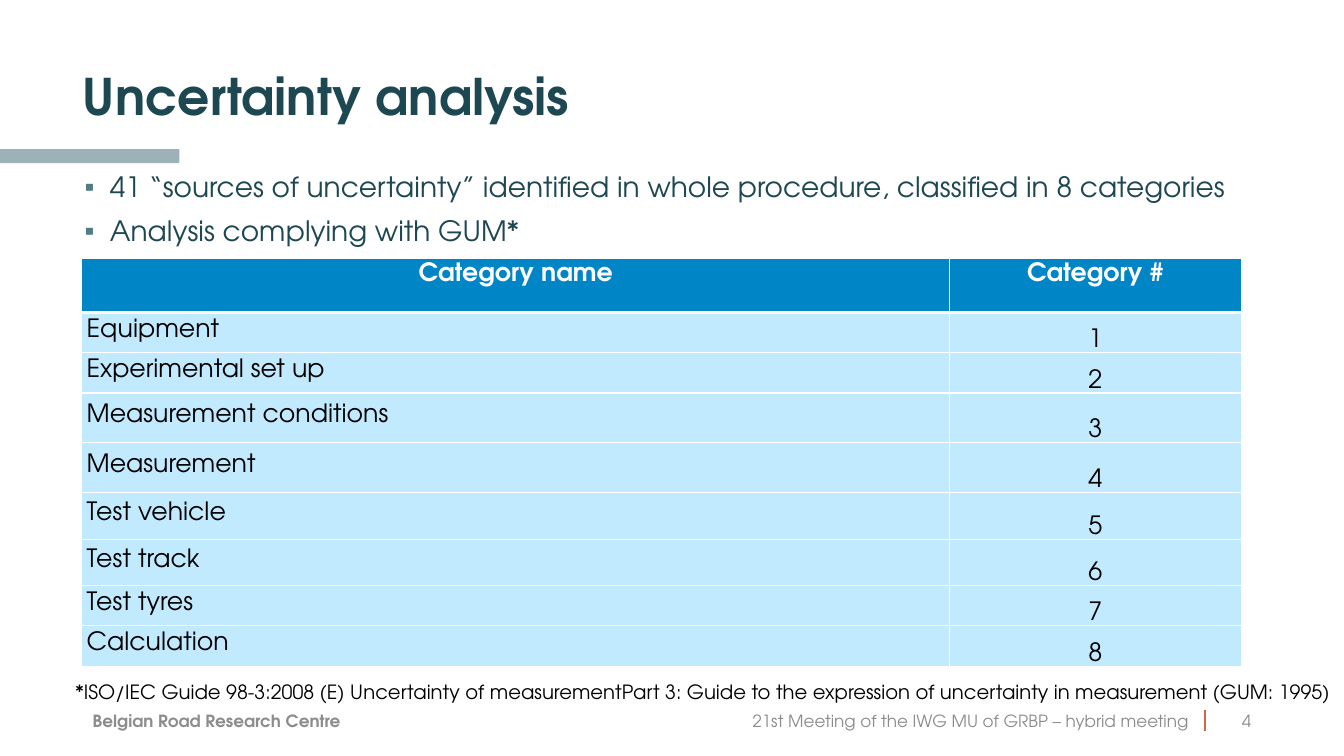
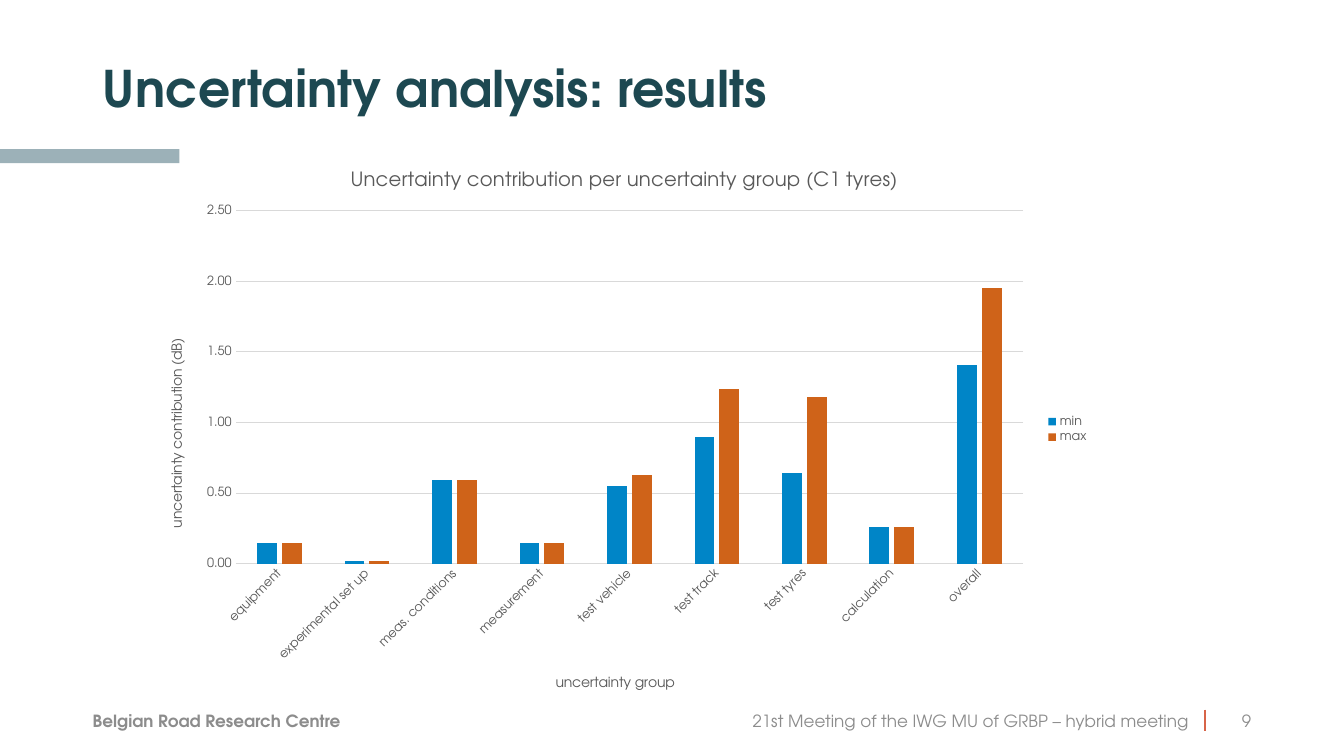
"""Build two slides on uncertainty analysis: a category table and a results chart."""
from dataclasses import dataclass

from lxml import etree
from pptx import Presentation
from pptx.chart.data import CategoryChartData
from pptx.dml.color import RGBColor
from pptx.enum.chart import XL_CHART_TYPE, XL_LEGEND_POSITION, XL_TICK_MARK
from pptx.enum.shapes import MSO_CONNECTOR, MSO_SHAPE
from pptx.enum.text import MSO_ANCHOR, MSO_AUTO_SIZE, PP_ALIGN
from pptx.oxml import parse_xml
from pptx.oxml.ns import nsdecls, qn
from pptx.util import Inches, Pt

LEFT, CENTER, RIGHT = PP_ALIGN.LEFT, PP_ALIGN.CENTER, PP_ALIGN.RIGHT
TOP, MIDDLE, BOTTOM = MSO_ANCHOR.TOP, MSO_ANCHOR.MIDDLE, MSO_ANCHOR.BOTTOM
NO_AUTOFIT = MSO_AUTO_SIZE.NONE
RECTANGLE = MSO_SHAPE.RECTANGLE
STRAIGHT = MSO_CONNECTOR.STRAIGHT
CLUSTERED_COLUMNS = XL_CHART_TYPE.COLUMN_CLUSTERED
LEGEND_RIGHT = XL_LEGEND_POSITION.RIGHT
NO_TICKS = XL_TICK_MARK.NONE


@dataclass(frozen=True)
class Theme:
    font: str = "TeX Gyre Adventor"
    heading: str = "1D4851"
    bullet: str = "527B85"
    band: str = "9CB1B8"
    divider: str = "D76448"
    footer: str = "8C8C8C"
    black: str = "000000"
    white: str = "FFFFFF"
    blue: str = "0085C7"
    pale_blue: str = "C1EAFF"
    orange: str = "CF6319"
    chart_text: str = "595959"
    grid: str = "D9D9D9"
    title_size: int = 36
    list_size: int = 20
    table_size: int = 18
    note_size: int = 14
    footer_size: int = 12
    axis_title_size: int = 10
    label_size: int = 9


THEME = Theme()


def style_font(font, size, color, bold=False):
    font.name = THEME.font
    font.size = Pt(size)
    font.bold = bold
    font.color.rgb = RGBColor.from_string(color)


def add_text(slide, box, text, size, color, bold=False, align=LEFT, anchor=MIDDLE):
    frame = slide.shapes.add_textbox(*map(Inches, box)).text_frame
    frame.word_wrap = True
    frame.vertical_anchor = anchor
    paragraph = frame.paragraphs[0]
    paragraph.text = text
    paragraph.alignment = align
    style_font(paragraph.font, size, color, bold)
    return frame


presentation = Presentation()
presentation.slide_width = Inches(13.33)
presentation.slide_height = Inches(7.5)

pages = [
    (1, "Uncertainty analysis", (0.72, 0.22, 11.88, 1.53), "4"),
    (5, "Uncertainty analysis: results", (0.92, 0.32, 11.5, 1.16), "9"),
]
slides = []
for layout_index, title_text, title_box, number in pages:
    slide = presentation.slides.add_slide(presentation.slide_layouts[layout_index])
    slides.append(slide)

    band = slide.shapes.add_shape(RECTANGLE, 0, Inches(1.48), Inches(1.78), Inches(0.14))
    band.shadow.inherit = False
    band.fill.solid()
    band.fill.fore_color.rgb = RGBColor.from_string(THEME.band)
    band.line.fill.background()

    divider = slide.shapes.add_connector(
        STRAIGHT, Inches(11.95), Inches(7.04), Inches(11.95), Inches(7.25))
    divider.line.color.rgb = RGBColor.from_string(THEME.divider)
    divider.line.width = Pt(1.5)
    etree.SubElement(divider.element.spPr, qn("a:effectLst"))

    title = slide.shapes.title
    title.left, title.top, title.width, title.height = map(Inches, title_box)
    title.text_frame.auto_size = NO_AUTOFIT
    title.text_frame.vertical_anchor = MIDDLE
    paragraph = title.text_frame.paragraphs[0]
    paragraph.text = title_text
    paragraph.alignment = LEFT
    paragraph.line_spacing = 0.9
    style_font(paragraph.font, THEME.title_size, THEME.heading, True)

    organisation = add_text(slide, (0.92, 6.95, 4.06, 0.4), "Belgian Road Research Centre",
                            THEME.footer_size, THEME.footer, bold=True)
    organisation.margin_left = 0
    add_text(slide, (4.97, 6.95, 6.92, 0.4),
             "21st Meeting of the IWG MU of GRBP – hybrid meeting",
             THEME.footer_size, THEME.footer, align=RIGHT)
    page_number = add_text(slide, (11.99, 6.95, 0.42, 0.4), number,
                           THEME.footer_size, THEME.footer, align=RIGHT)
    page_number.margin_left = Inches(0.08)
    page_number.margin_right = 0

table_slide, chart_slide = slides

body = table_slide.placeholders[1]
body.left, body.top, body.width, body.height = map(Inches, (0.74, 1.67, 12.35, 0.97))
body.text_frame.auto_size = NO_AUTOFIT
bullets = [
    "41 “sources of uncertainty” identified in whole procedure, classified in 8 categories",
    "Analysis complying with GUM*",
]
body.text_frame.text = "\n".join(bullets)
for index, paragraph in enumerate(body.text_frame.paragraphs):
    properties = paragraph._p.get_or_add_pPr()
    properties.set("marL", str(Inches(0.25)))
    properties.set("indent", str(-Inches(0.25)))
    bullet_color = etree.SubElement(properties, qn("a:buClr"))
    etree.SubElement(bullet_color, qn("a:srgbClr"), val=THEME.bullet)
    etree.SubElement(properties, qn("a:buChar"), char="▪")
    paragraph.line_spacing = 0.9
    paragraph.space_before = Pt(10 if index else 0)
    style_font(paragraph.font, THEME.list_size, THEME.heading)

categories = ["Equipment", "Experimental set up", "Measurement conditions", "Measurement",
              "Test vehicle", "Test track", "Test tyres", "Calculation"]
rows = [("Category name", "Category #")]
rows += [(name, str(number)) for number, name in enumerate(categories, 1)]
row_heights = [0.54, 0.4, 0.4, 0.49, 0.5, 0.46, 0.46, 0.4, 0.4]
table = table_slide.shapes.add_table(
    len(rows), 2, Inches(0.81), Inches(2.56), Inches(11.5), Inches(4.05)).table
for column, width in zip(table.columns, (8.61, 2.89)):
    column.width = Inches(width)
for row_index, (row_texts, height) in enumerate(zip(rows, row_heights)):
    table.rows[row_index].height = Inches(height)
    is_header = row_index == 0
    for column_index, text in enumerate(row_texts):
        cell = table.cell(row_index, column_index)
        cell_properties = cell._tc.get_or_add_tcPr()
        for side in ("lnL", "lnR", "lnT", "lnB"):
            thick = (is_header and side == "lnB") or (row_index == 1 and side == "lnT")
            border = etree.SubElement(cell_properties, qn(f"a:{side}"), w=str(Pt(3 if thick else 1)))
            border_fill = etree.SubElement(border, qn("a:solidFill"))
            etree.SubElement(border_fill, qn("a:srgbClr"), val=THEME.white)
        cell.fill.solid()
        cell.fill.fore_color.rgb = RGBColor.from_string(THEME.blue if is_header else THEME.pale_blue)
        paragraph = cell.text_frame.paragraphs[0]
        paragraph.text = text
        paragraph.alignment = CENTER if is_header or column_index else LEFT
        style_font(paragraph.font, THEME.table_size,
                   THEME.white if is_header else THEME.black, is_header)
        if not is_header:
            cell.vertical_anchor = BOTTOM if column_index else MIDDLE
            cell.margin_left = cell.margin_right = Inches(0.05)
            cell.margin_top = cell.margin_bottom = 0
            paragraph.line_spacing = Pt(14)

add_text(table_slide, (0.65, 6.7, 12.86, 0.34),
         "*ISO/IEC Guide 98-3:2008 (E) Uncertainty of measurement"
         "Part 3: Guide to the expression of uncertainty in measurement (GUM: 1995)",
         THEME.note_size, THEME.black, anchor=TOP)

chart_data = CategoryChartData(number_format="0.00")
chart_data.categories = ["equipment", "experimental set up", "meas. conditions", "measurement",
                         "test vehicle", "test track", "test tyres", "calculation", "overall"]
chart_data.add_series("min", [0.15, 0.02, 0.59, 0.15, 0.55, 0.9, 0.64, 0.26, 1.41])
chart_data.add_series("max", [0.15, 0.02, 0.59, 0.15, 0.63, 1.24, 1.18, 0.26, 1.95])
chart = chart_slide.shapes.add_chart(
    CLUSTERED_COLUMNS, Inches(1.49), Inches(1.48), Inches(9.41), Inches(5.56), chart_data).chart
style_font(chart.font, THEME.axis_title_size, THEME.black)

plot = chart.plots[0]
plot.gap_width = 219
plot.overlap = -27
plot.vary_by_categories = False
for series, color in zip(plot.series, (THEME.blue, THEME.orange)):
    series.format.fill.solid()
    series.format.fill.fore_color.rgb = RGBColor.from_string(color)

category_axis, value_axis = chart.category_axis, chart.value_axis
chart.has_title = True
titles = [
    (chart.chart_title, "Uncertainty contribution per uncertainty group (C1 tyres)", THEME.note_size),
    (category_axis.axis_title, "uncertainty group", THEME.axis_title_size),
    (value_axis.axis_title, "uncertainty contribution (dB)", THEME.axis_title_size),
]
for chart_title, text, size in titles:
    paragraph = chart_title.text_frame.paragraphs[0]
    paragraph.text = text
    style_font(paragraph.font, size, THEME.chart_text)

for axis in (category_axis, value_axis):
    axis.major_tick_mark = axis.minor_tick_mark = NO_TICKS
    style_font(axis.tick_labels.font, THEME.label_size, THEME.chart_text)
value_axis.minimum_scale = 0
value_axis.maximum_scale = 2.5
value_axis.major_unit = 0.5
value_axis.tick_labels.number_format = "0.00"
value_axis.tick_labels.number_format_is_linked = False
value_axis.format.line.fill.background()
for line in (category_axis.format.line, value_axis.major_gridlines.format.line):
    line.color.rgb = RGBColor.from_string(THEME.grid)
    line.width = Pt(0.75)

chart.has_legend = True
chart.legend.position = LEGEND_RIGHT
chart.legend.include_in_layout = False
style_font(chart.legend.font, THEME.label_size, THEME.chart_text)

rotations = [("//c:catAx/c:txPr/a:bodyPr", -45), ("//c:valAx/c:title//a:bodyPr", -90)]
for query, degrees in rotations:
    text_body = chart.element.xpath(query)[0]
    text_body.set("rot", str(degrees * 60000))
    text_body.set("vert", "horz")

plot_area = chart.element.xpath("//c:plotArea")[0]
for old_layout in plot_area.findall(qn("c:layout")):
    plot_area.remove(old_layout)
plot_area.insert(0, parse_xml(
    f'<c:layout {nsdecls("c")}><c:manualLayout><c:layoutTarget val="inner"/>'
    '<c:xMode val="edge"/><c:yMode val="edge"/><c:x val="0.09"/><c:y val="0.11"/>'
    '<c:w val="0.83"/><c:h val="0.63"/></c:manualLayout></c:layout>'))

presentation.save("out.pptx")
